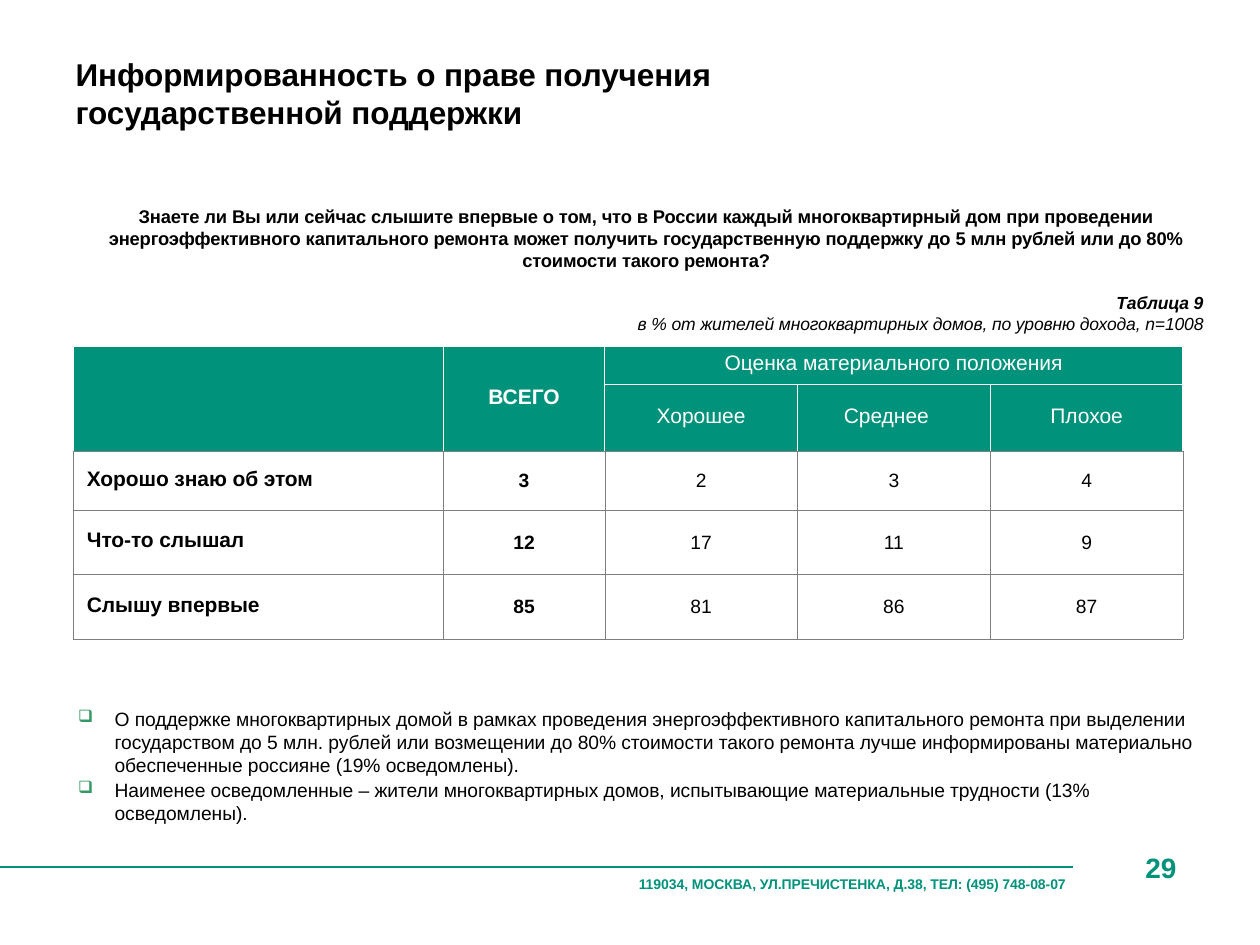
from lxml import etree
from pptx import Presentation
from pptx.dml.color import RGBColor
from pptx.enum.shapes import MSO_CONNECTOR
from pptx.enum.text import MSO_ANCHOR, PP_ALIGN
from pptx.oxml.ns import qn
from pptx.util import Inches, Pt

LEFT, MID, RIGHT = PP_ALIGN.LEFT, PP_ALIGN.CENTER, PP_ALIGN.RIGHT
MIDDLE = MSO_ANCHOR.MIDDLE
STRAIGHT = MSO_CONNECTOR.STRAIGHT
HEX = {"green": "00927A", "rule": "00907C", "mark": "339966",
       "grid": "7E7E7E", "black": "000000", "white": "FFFFFF"}

prs = Presentation()
prs.slide_width, prs.slide_height = Inches(10), Inches(7.5)
slide = prs.slides.add_slide(prs.slide_layouts[6])


def write(para, text, size, color="black", align=LEFT, tight=True, **style):
    para.alignment = align
    run = para.add_run()
    run.text = text
    look = {"name": "Arial", "size": Pt(size), "bold": False, **style}
    for key, value in look.items():
        setattr(run.font, key, value)
    run.font.color.rgb = RGBColor.from_string(HEX[color])
    if tight:
        run.font._element.set("spc", "-5")


def add_box(left, top, width, height, inset=0):
    frame = slide.shapes.add_textbox(
        Inches(left), Inches(top), Inches(width), Inches(height)).text_frame
    frame.word_wrap = True
    frame.margin_left = frame.margin_right = frame.margin_bottom = 0
    frame.margin_top = Inches(inset)
    return frame


rule = slide.shapes.add_connector(
    STRAIGHT, 0, Inches(6.88), Inches(8.52), Inches(6.88))
rule.line.color.rgb = RGBColor.from_string(HEX["rule"])
rule.line.width = Pt(1.2)
etree.SubElement(rule._element.spPr, qn("a:effectLst"))

title = add_box(0.6, 0.42, 6.01, 0.62, 0.02)
write(title.paragraphs[0],
      "Информированность о праве получения государственной поддержки",
      18, bold=True)

ask = add_box(0.71, 1.6, 8.84, 0.56, 0.03)
write(ask.paragraphs[0],
      "Знаете ли Вы или сейчас слышите впервые о том, что в России каждый "
      "многоквартирный дом при проведении энергоэффективного капитального "
      "ремонта может получить государственную поддержку до 5 млн рублей или "
      "до 80% стоимости такого ремонта?", 10.5, align=MID, bold=True)

note = add_box(0.71, 2.32, 8.84, 0.34)
write(note.paragraphs[0], "Таблица 9", 10, align=RIGHT, bold=True, italic=True)
write(note.add_paragraph(),
      "в % от жителей многоквартирных домов, по уровню дохода, n=1008",
      10, align=RIGHT, italic=True)

cols = [2.94, 1.28, 1.53, 1.53, 1.53]
rows = [0.3, 0.53, 0.47, 0.51, 0.51]
data = [
    ["", "ВСЕГО", "Оценка материального положения", "", ""],
    ["", "", "Хорошее", "Среднее", "Плохое"],
    ["Хорошо знаю об этом", "3", "2", "3", "4"],
    ["Что-то слышал", "12", "17", "11", "9"],
    ["Слышу впервые", "85", "81", "86", "87"],
]
table = slide.shapes.add_table(
    len(rows), len(cols), Inches(0.58), Inches(2.75),
    Inches(sum(cols)), Inches(sum(rows))).table
table.first_row = table.horz_banding = False
for col, width in zip(table.columns, cols):
    col.width = Inches(width)
for row, height in zip(table.rows, rows):
    row.height = Inches(height)

for r, line in enumerate(data):
    head = r < 2
    for c, text in enumerate(line):
        cell = table.cell(r, c)
        label = not head and c == 0
        cell.vertical_anchor = MIDDLE
        cell.margin_left = Inches(0.11 if label else 0)
        cell.margin_right = Inches(0.12 if text == "Среднее" else 0)
        cell.margin_top = 0
        cell.margin_bottom = Inches(0.03 if head or label else 0)
        props = cell._tc.get_or_add_tcPr()
        for side in "LRTB":
            white = head and not (side == "B" and (r == 1 or c < 2))
            edge = etree.SubElement(props, qn("a:ln" + side),
                                    w=str(Pt(1 if white else 0.25)))
            fill = etree.SubElement(edge, qn("a:solidFill"))
            etree.SubElement(fill, qn("a:srgbClr"),
                             val=HEX["white" if white else "grid"])
        cell.fill.solid()
        cell.fill.fore_color.rgb = RGBColor.from_string(
            HEX["green" if head else "white"])
        if text:
            write(cell.text_frame.paragraphs[0], text,
                  12 if head or label else 11,
                  "white" if head else "black", LEFT if label else MID,
                  tight=label, bold=text == "ВСЕГО" or not head and c < 2)

for first, last in [((0, 0), (1, 0)), ((0, 1), (1, 1)), ((0, 2), (0, 4))]:
    table.cell(*first).merge(table.cell(*last))

facts = [
    "О поддержке многоквартирных домой в рамках проведения "
    "энергоэффективного капитального ремонта при выделении государством до "
    "5 млн. рублей или возмещении до 80% стоимости такого ремонта лучше "
    "информированы материально обеспеченные россияне (19% осведомлены).",
    "Наименее осведомленные – жители многоквартирных домов, испытывающие "
    "материальные трудности (13% осведомлены).",
]
list_box = add_box(0.6, 5.59, 8.96, 0.95, 0.02)
for i, fact in enumerate(facts):
    para = list_box.add_paragraph() if i else list_box.paragraphs[0]
    if i:
        para.space_before = Pt(1)
    props = para._p.get_or_add_pPr()
    props.set("marL", str(Inches(0.31)))
    props.set("indent", str(Inches(-0.29)))
    tint = etree.SubElement(props, qn("a:buClr"))
    etree.SubElement(tint, qn("a:srgbClr"), val=HEX["mark"])
    etree.SubElement(props, qn("a:buSzPct"), val="88000")
    etree.SubElement(props, qn("a:buChar"), char="❑")
    write(para, fact, 11)

page = add_box(9.09, 6.75, 0.29, 0.28)
write(page.paragraphs[0], "29", 16, "green", bold=True)
foot = add_box(5.07, 6.95, 3.47, 0.15)
write(foot.paragraphs[0],
      "119034, МОСКВА, УЛ.ПРЕЧИСТЕНКА, Д.38, ТЕЛ: (495) 748-08-07",
      8, "green", bold=True)

prs.save("out.pptx")
